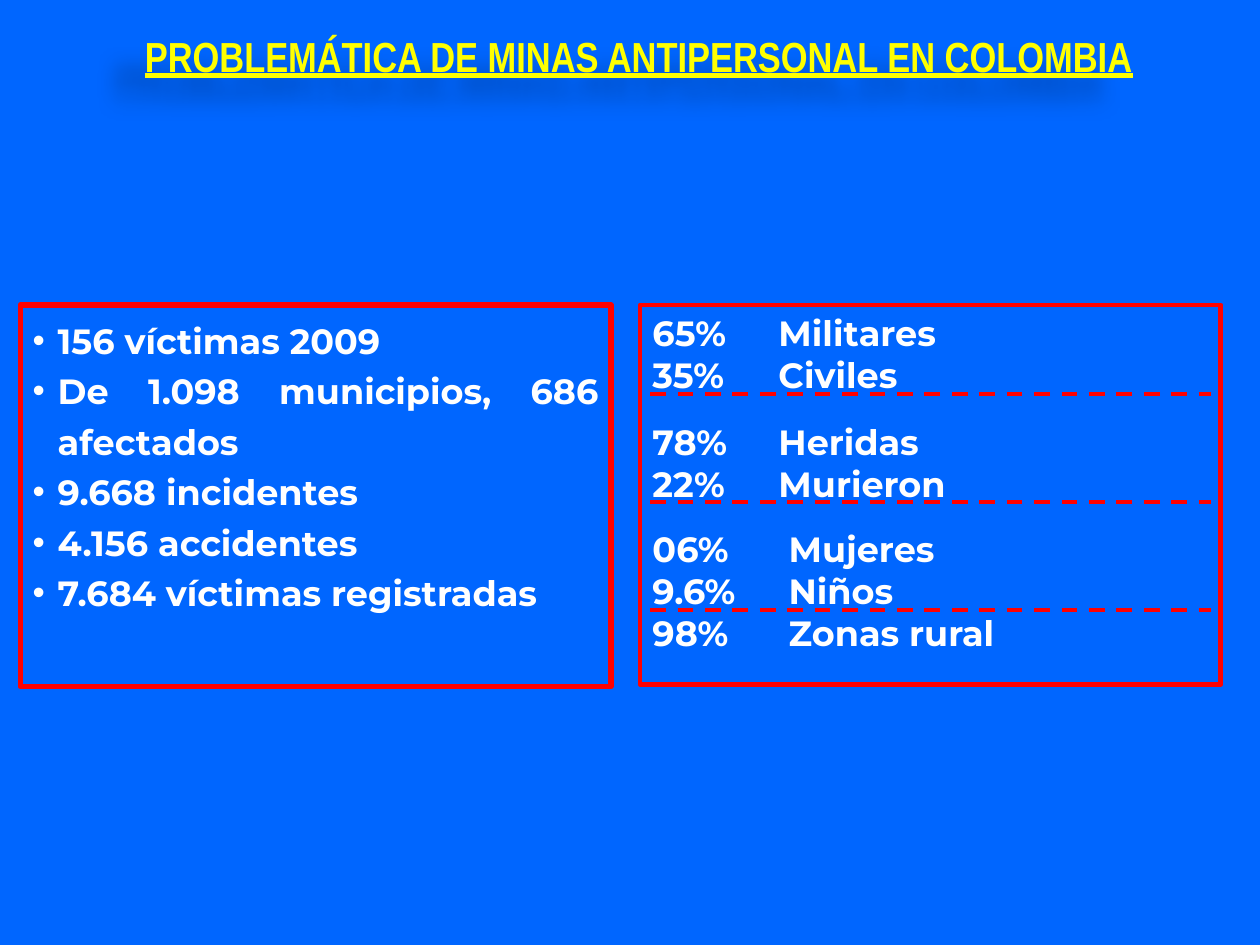
from pptx import Presentation
from pptx.dml.color import RGBColor as Color
from pptx.enum.dml import MSO_LINE
from pptx.enum.shapes import MSO_CONNECTOR as Connector, MSO_SHAPE as Shape
from pptx.enum.text import MSO_ANCHOR as Anchor, PP_ALIGN as Align
from pptx.oxml import parse_xml
from pptx.oxml.ns import nsdecls
from pptx.util import Inches, Pt

# Content
TITLE = "PROBLEMÁTICA DE MINAS ANTIPERSONAL EN COLOMBIA"
FACTS = [
    "156 víctimas 2009",
    "De 1.098 municipios, 686 afectados",
    "9.668 incidentes",
    "4.156 accidentes",
    "7.684 víctimas registradas",
]
# Each group: space above (pt), tab position (in), rows
SHARES = [
    (0, 1, [("65%", "Militares"), ("35%", "Civiles")]),
    (14.4, 1, [("78%", "Heridas"), ("22%", "Murieron")]),
    (13.2, 1.08, [("06%", "Mujeres"), ("9.6%", "Niños"), ("98%", "Zonas rural")]),
]

THEME = {
    "back": Color(0x00, 0x66, 0xFF), "frame": Color(0xFF, 0, 0),
    "title": Color(0xFF, 0xFF, 0), "text": Color(0xFF, 0xFF, 0xFF),
    "title_font": "Arial Narrow", "text_font": "Montserrat",
    "title_size": 24, "text_size": 20,
}

# Layout in inches
TITLE_BOX = (0.53, 0.17, 9.08, 0.55)
PANEL_TOP = 2.42
FACTS_BOX = (0.16, PANEL_TOP, 4.69, 3.03)
SHARES_BOX = (5.08, PANEL_TOP, 4.61, 3.01)
RULE_INSET, RULE_TOP, RULE_PITCH, RULE_COUNT = 0.08, 3.125, 0.86, 3
INDENT = 0.2

deck = Presentation()
deck.slide_width, deck.slide_height = Inches(10), Inches(7.5)
page = deck.slides.add_slide(deck.slide_layouts[6])
page.background.fill.solid()
page.background.fill.fore_color.rgb = THEME["back"]


def add_box(kind, place, anchor, line_width=0):
    box = page.shapes.add_shape(kind, *map(Inches, place))
    box.shadow.inherit = False
    box.fill.background()
    if line_width:
        box.line.color.rgb = THEME["frame"]
        box.line.width = Pt(line_width)
    else:
        box.line.fill.background()
    box.text_frame.word_wrap = True
    box.text_frame.vertical_anchor = anchor
    return box


def write(box, lines, role, align):
    box.text_frame.text = "\n".join(lines)
    for para in box.text_frame.paragraphs:
        para.alignment = align
        for span in para.runs:
            span.font.name = THEME[role + "_font"]
            span.font.size = Pt(THEME[role + "_size"])
            span.font.color.rgb = THEME[role]
            span.font.bold = True
            span.font.underline = role == "title"
    return box.text_frame.paragraphs


# Title with a soft shadow to the lower left
title = add_box(Shape.ROUNDED_RECTANGLE, TITLE_BOX, Anchor.MIDDLE)
write(title, [TITLE], "title", Align.CENTER)
title.element.spPr.remove(title.element.spPr.find("{*}effectLst"))
title.element.spPr.append(parse_xml(
    f'<a:effectLst {nsdecls("a")}><a:outerShdw blurRad="{Inches(0.16)}" '
    f'dist="{Inches(0.3)}" dir="8700000" algn="ctr" rotWithShape="0">'
    '<a:srgbClr val="000000"><a:alpha val="28000"/></a:srgbClr>'
    '</a:outerShdw></a:effectLst>'))

# Facts panel with bullets
facts = add_box(Shape.RECTANGLE, FACTS_BOX, Anchor.TOP, 3)
for para in write(facts, FACTS, "text", Align.JUSTIFY):
    para.line_spacing = 1.2
    props = para._p.get_or_add_pPr()
    props.set("marL", str(Inches(INDENT)))
    props.set("indent", str(-Inches(INDENT)))
    props.append(parse_xml(f'<a:buFont {nsdecls("a")} typeface="Arial"/>'))
    props.append(parse_xml(f'<a:buChar {nsdecls("a")} char="•"/>'))

# Shares panel: percentage, tab, label
rows = [(space if index == 0 else 0, tab, "\t".join(row))
        for space, tab, group in SHARES for index, row in enumerate(group)]
shares = add_box(Shape.RECTANGLE, SHARES_BOX, Anchor.TOP, 2.75)
paras = write(shares, [text for _, _, text in rows], "text", Align.JUSTIFY)
for para, (space, tab, _) in zip(paras, rows):
    para.space_before = Pt(space)
    para._p.get_or_add_pPr().append(parse_xml(
        f'<a:tabLst {nsdecls("a")}><a:tab pos="{Inches(tab)}" algn="l"/></a:tabLst>'))

# Dashed rules across the shares panel
left, _, width, _ = SHARES_BOX
for number in range(RULE_COUNT):
    top = Inches(RULE_TOP + number * RULE_PITCH)
    rule = page.shapes.add_connector(
        Connector.STRAIGHT, Inches(left + RULE_INSET), top,
        Inches(left + width - RULE_INSET), top)
    rule.line.color.rgb = THEME["frame"]
    rule.line.width = Pt(2.25)
    rule.line.dash_style = MSO_LINE.DASH
    rule.element.spPr.append(parse_xml(f'<a:effectLst {nsdecls("a")}/>'))

deck.save("out.pptx")
